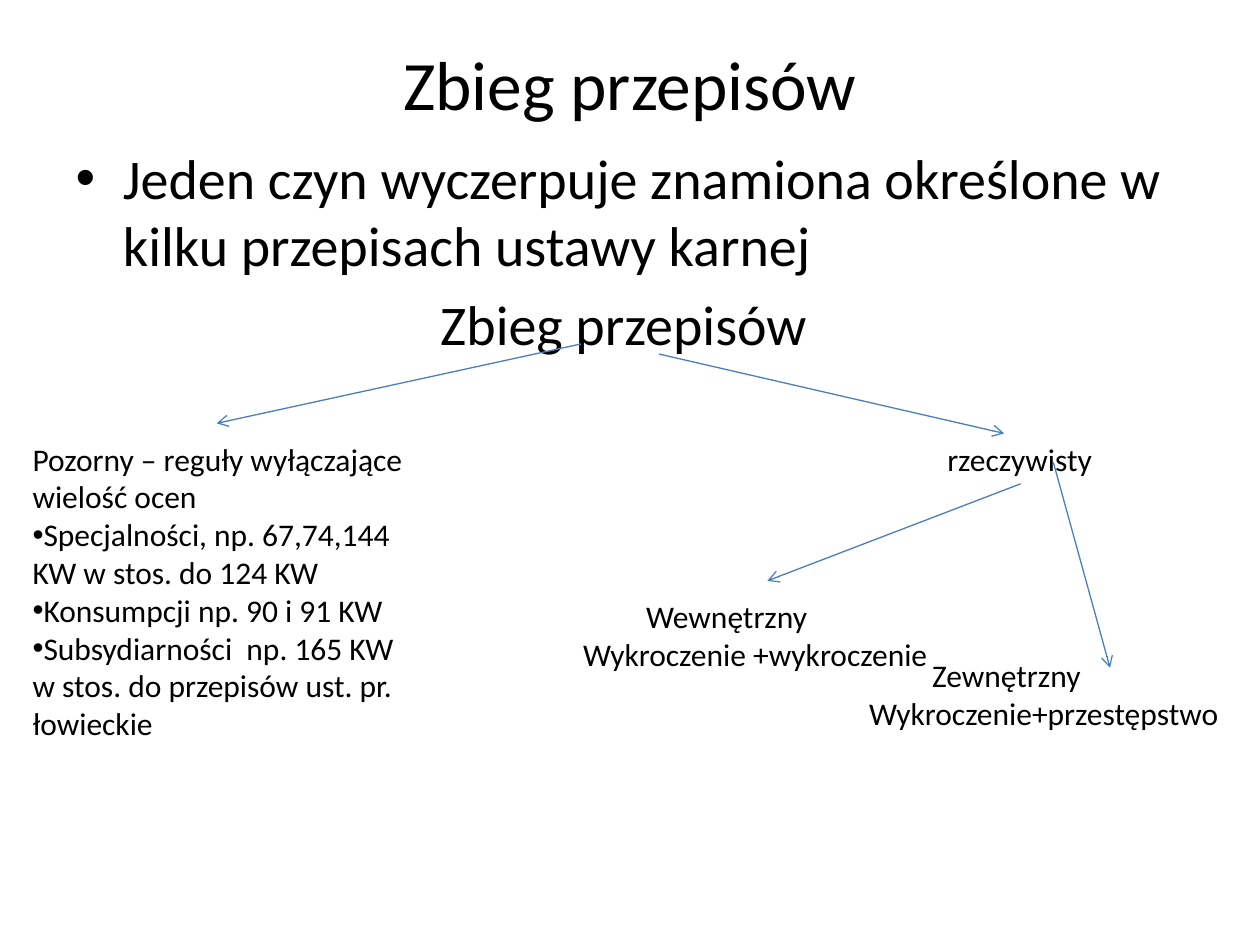
"""Builds a slide on concurrent legal provisions with a two-level tree of arrows."""
from lxml import etree
from pptx import Presentation
from pptx import util as u
from pptx.dml.color import RGBColor
from pptx.enum import shapes, text
from pptx.oxml.ns import qn

COLORS = {"text": "000000", "arrow": "4B7EBC"}
FONT = "Calibri"
COLUMNS, ROWS = 100, 75
WIDTH, HEIGHT = u.Inches(10), u.Inches(7.5)


def column(count):
    return round(WIDTH * count / COLUMNS)


def row(count):
    return round(HEIGHT * count / ROWS)


def place(shape, left, top, width, height):
    shape.left, shape.top = column(left), row(top)
    shape.width, shape.height = column(width), row(height)


def set_bullet(para, bullet):
    properties = para._p.get_or_add_pPr()
    if bullet:
        etree.SubElement(properties, qn("a:buFont"), typeface="Arial")
        etree.SubElement(properties, qn("a:buChar"), char="•")
    else:
        etree.SubElement(properties, qn("a:buNone"))


def write(para, words, size=18, align=text.PP_ALIGN.LEFT, bullet=False):
    para.alignment = align
    set_bullet(para, bullet)
    span = para.add_run()
    span.text = words
    span.font.size = u.Pt(size)
    span.font.name = FONT
    span.font.color.rgb = RGBColor.from_string(COLORS["text"])


def fill_frame(frame, lines, **style):
    for index, (words, options) in enumerate(lines):
        para = frame.add_paragraph() if index else frame.paragraphs[0]
        write(para, words, **{**style, **options})


def fill_placeholder(holder, area, lines, size, anchor):
    place(holder, *area)
    frame = holder.text_frame
    frame.auto_size = text.MSO_AUTO_SIZE.NONE
    frame.vertical_anchor = anchor
    fill_frame(frame, lines, size=size)


def add_label(page, area, lines, wrap=True):
    box = page.shapes.add_textbox(0, 0, 0, 0)
    place(box, *area)
    box.text_frame.word_wrap = wrap
    box.text_frame.auto_size = text.MSO_AUTO_SIZE.SHAPE_TO_FIT_TEXT
    fill_frame(box.text_frame, lines)
    return box


def add_arrow(page, start, end, source=None):
    arrow = page.shapes.add_connector(
        shapes.MSO_CONNECTOR.STRAIGHT,
        column(start[0]), row(start[1]), column(end[0]), row(end[1]))
    if source is not None:
        arrow.begin_connect(source, 2)
    arrow.line.color.rgb = RGBColor.from_string(COLORS["arrow"])
    arrow.line.width = u.Pt(0.75)
    etree.SubElement(arrow.line._get_or_add_ln(), qn("a:tailEnd"), type="arrow")
    etree.SubElement(arrow._element.spPr, qn("a:effectLst"))


def main():
    deck = Presentation()
    deck.slide_width, deck.slide_height = WIDTH, HEIGHT
    page = deck.slides.add_slide(deck.slide_layouts[1])
    centre = {"align": text.PP_ALIGN.CENTER}
    item = {"bullet": True}

    fill_placeholder(page.shapes.title, (5, 3, 90, 7.2),
                     [("Zbieg przepisów", centre)], 39.6, text.MSO_ANCHOR.MIDDLE)
    fill_placeholder(page.placeholders[1], (5, 10.9, 90, 62.5), [
        ("Jeden czyn wyczerpuje znamiona określone w kilku przepisach ustawy karnej", item),
        ("Zbieg przepisów ", centre),
    ], 32, text.MSO_ANCHOR.TOP)

    add_label(page, (1.6, 34.4, 32.8, 25.2), [
        ("Pozorny – reguły wyłączające wielość ocen", {}),
        ("Specjalności, np. 67,74,144 KW w stos. do 124 KW", item),
        ("Konsumpcji np. 90 i 91 KW", item),
        ("Subsydiarności  np. 165 KW w stos. do przepisów ust. pr. łowieckie", item),
    ])
    real = add_label(page, (74.2, 34.4, 13.6, 4), [("rzeczywisty", {})], wrap=False)
    add_label(page, (45.3, 46.9, 29.6, 7.1),
              [("\tWewnętrzny", {}), ("Wykroczenie +wykroczenie", {})])
    add_label(page, (68, 51.6, 32, 7.1),
              [("\tZewnętrzny", {}), ("Wykroczenie+przestępstwo", {})])

    add_arrow(page, (46.1, 27.3), (17.2, 33.6))
    add_arrow(page, (52.3, 28.1), (79.7, 34.4))
    add_arrow(page, (83.6, 36.7), (88.1, 53))
    add_arrow(page, (81, 38.4), (60.9, 46.1), source=real)

    deck.save("out.pptx")


if __name__ == "__main__":
    main()
